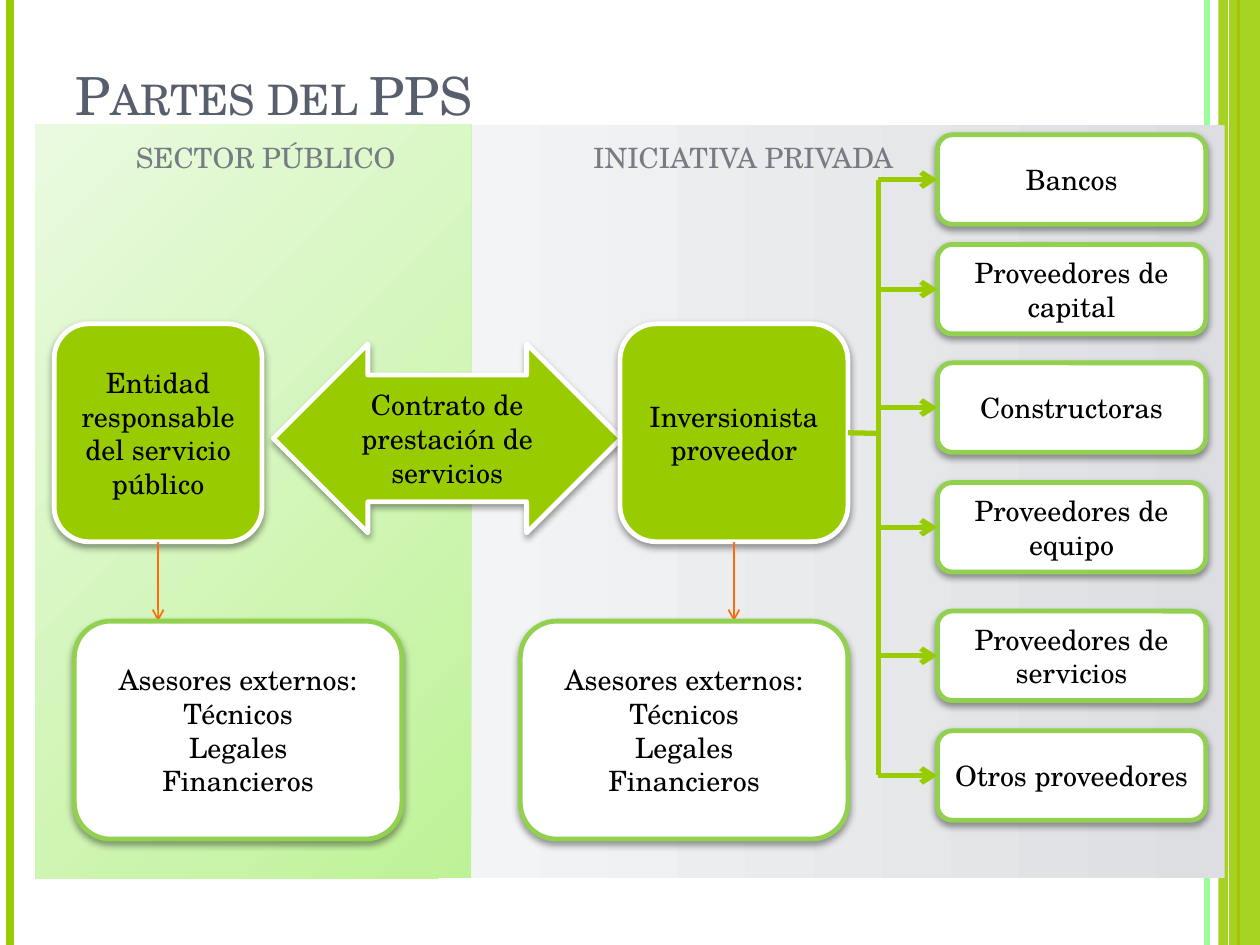
from dataclasses import dataclass

from lxml.etree import SubElement
from pptx import Presentation
from pptx.dml.color import RGBColor
from pptx.enum.shapes import MSO_CONNECTOR as Connector, MSO_SHAPE as Shape
from pptx.enum.text import MSO_ANCHOR as Anchor, PP_ALIGN as Align
from pptx.oxml.ns import qn
from pptx.util import Inches, Pt


@dataclass(frozen=True)
class Theme:
    font: str = "TeX Gyre Schola"
    title_size: int = 30
    body_size: int = 16
    title: str = "575F6D"
    label: str = "777C84"
    text: str = "000000"
    white: str = "FFFFFF"
    lime: str = "99CC00"
    green: str = "92D050"
    mint: str = "99FF99"
    orange: str = "FF6B0A"
    margin_orange: str = "FE8637"
    public_panel: tuple = ("BEF297", "EAFAE0")
    private_panel: tuple = ("DCDEE1", "F3F4F5")


THEME = Theme()
ADVISERS = "Asesores externos:\nTécnicos\nLegales\nFinancieros"
PROVIDERS = (
    (1.07, "Bancos"),
    (1.94, "Proveedores de capital"),
    (2.88, "Constructoras"),
    (3.83, "Proveedores de equipo"),
    (4.85, "Proveedores de servicios"),
    (5.8, "Otros proveedores"),
)


def rgb(color):
    return RGBColor.from_string(color)


def write(frame, text, size, color, align):
    frame.text = text
    frame.word_wrap = True
    for paragraph in frame.paragraphs:
        paragraph.alignment = align
        paragraph.font.name = THEME.font
        paragraph.font.size = Pt(size)
        paragraph.font.color.rgb = rgb(color)


def add_label(slide, box, text, size, color):
    label = slide.shapes.add_textbox(*map(Inches, box))
    write(label.text_frame, text, size, color, Align.LEFT)
    return label.text_frame


def add_line(slide, start, end, color, width, arrow=False):
    line = slide.shapes.add_connector(Connector.STRAIGHT, *map(Inches, start + end))
    line.line.color.rgb = rgb(color)
    line.line.width = Pt(width)
    properties = line.line._get_or_add_ln()
    if arrow:
        SubElement(properties, qn("a:tailEnd"), type="arrow")
    SubElement(properties.getparent(), qn("a:effectLst"))
    return line


def add_shadow(node):
    properties = node._element.spPr
    effects = properties.find(qn("a:effectLst"))
    shadow = SubElement(effects, qn("a:outerShdw"), blurRad=str(Pt(4)),
                        dist=str(Pt(2)), dir="5400000", rotWithShape="0")
    color = SubElement(shadow, qn("a:srgbClr"), val=THEME.text)
    SubElement(color, qn("a:alpha"), val="40000")


def add_node(slide, box, text, fill, outline, kind=Shape.ROUNDED_RECTANGLE):
    node = slide.shapes.add_shape(kind, *map(Inches, box))
    node.shadow.inherit = False
    node.fill.solid()
    node.fill.fore_color.rgb = rgb(fill)
    node.line.color.rgb = rgb(outline)
    node.line.width = Pt(2.75)
    add_shadow(node)
    node.text_frame.vertical_anchor = Anchor.MIDDLE
    write(node.text_frame, text, THEME.body_size, THEME.text, Align.CENTER)
    return node


def add_margins(slide, width, height):
    def rule(x, color, weight):
        add_line(slide, (x, 0), (x, height), color, weight)

    rule(width - 0.42, THEME.mint, 3)
    rule(0.08, THEME.lime, 4.5)
    rule(width - 0.17, THEME.margin_orange, 1.5)
    band = slide.shapes.add_shape(
        Shape.RECTANGLE, *map(Inches, (width - 0.33, 0, 0.33, height)))
    band.shadow.inherit = False
    band.fill.solid()
    band.fill.fore_color.rgb = rgb(THEME.lime)
    band.line.fill.background()
    tint = band._element.spPr.find(qn("a:solidFill")).find(qn("a:srgbClr"))
    SubElement(tint, qn("a:alpha"), val="87000")
    rule(width - 0.25, THEME.white, 0.75)


def add_title(slide, box, text):
    frame = add_label(slide, box, text, THEME.title_size, THEME.title)
    frame.vertical_anchor = Anchor.BOTTOM
    frame.paragraphs[0]._p.pPr.find(qn("a:defRPr")).set("cap", "small")


def add_panel(slide, box, colors, angle):
    panel = slide.shapes.add_shape(Shape.RECTANGLE, *map(Inches, box))
    panel.shadow.inherit = False
    panel.line.fill.background()
    panel.fill.gradient()
    panel.fill.gradient_angle = angle
    for stop, color in zip(panel.fill.gradient_stops, colors):
        stop.color.rgb = rgb(color)


def add_party(slide, box, text, advisers_left):
    left, top, width, height = box
    center, bottom, advisers_top = left + width / 2, top + height, 4.93
    party = add_node(slide, box, text, THEME.lime, THEME.white)
    arrow = add_line(slide, (center, bottom), (center, advisers_top),
                     THEME.orange, 1, arrow=True)
    arrow.begin_connect(party, 2)
    add_node(slide, (advisers_left, advisers_top, 2.6, height), ADVISERS,
             THEME.white, THEME.green)
    return party


def add_providers(slide, left, width, height, investor, stub_start):
    trunk = 6.97
    centers = [top + height / 2 for top, _ in PROVIDERS]
    add_line(slide, (trunk, centers[0]), (trunk, centers[-1]), THEME.lime, 3)
    for (top, text), center in zip(PROVIDERS, centers):
        provider = add_node(slide, (left, top, width, height), text,
                            THEME.white, THEME.green)
        branch = add_line(slide, (trunk, center), (left, center),
                          THEME.lime, 3, arrow=True)
        branch.end_connect(provider, 1)
    x, y = stub_start
    stub = add_line(slide, (x, y), (trunk, y), THEME.lime, 3)
    stub.begin_connect(investor, 3)


def main():
    width, height = 10, 7.5
    deck = Presentation()
    deck.slide_width, deck.slide_height = Inches(width), Inches(height)
    slide = deck.slides.add_slide(deck.slide_layouts[6])

    add_margins(slide, width, height)
    add_panel(slide, (3.74, 0.99, 5.98, 5.98), THEME.private_panel, 180)
    add_panel(slide, (0.28, 0.99, 3.46, 5.98), THEME.public_panel, 135)
    add_title(slide, (0.5, 0.3, 8.17, 0.75), "Partes del PPS")

    contract = add_node(slide, (2.17, 2.73, 2.76, 1.5),
                        "Contrato de prestación de servicios",
                        THEME.lime, THEME.white, Shape.LEFT_RIGHT_ARROW)
    contract.adjustments[0] = 0.67
    contract.adjustments[1] = 0.5

    add_party(slide, (0.43, 2.57, 1.65, 1.73),
              "Entidad responsable del servicio público", 0.59)
    investor = add_party(slide, (4.92, 2.57, 1.81, 1.73),
                         "Inversionista proveedor", 4.13)
    add_providers(slide, 7.44, 2.13, 0.71, investor, (6.73, 3.44))

    add_label(slide, (0.98, 1.07, 2.28, 0.37), "SECTOR PÚBLICO",
              THEME.body_size, THEME.label)
    add_label(slide, (4.61, 1.07, 2.67, 0.37), "INICIATIVA PRIVADA",
              THEME.body_size, THEME.label)
    deck.save("out.pptx")


if __name__ == "__main__":
    main()
